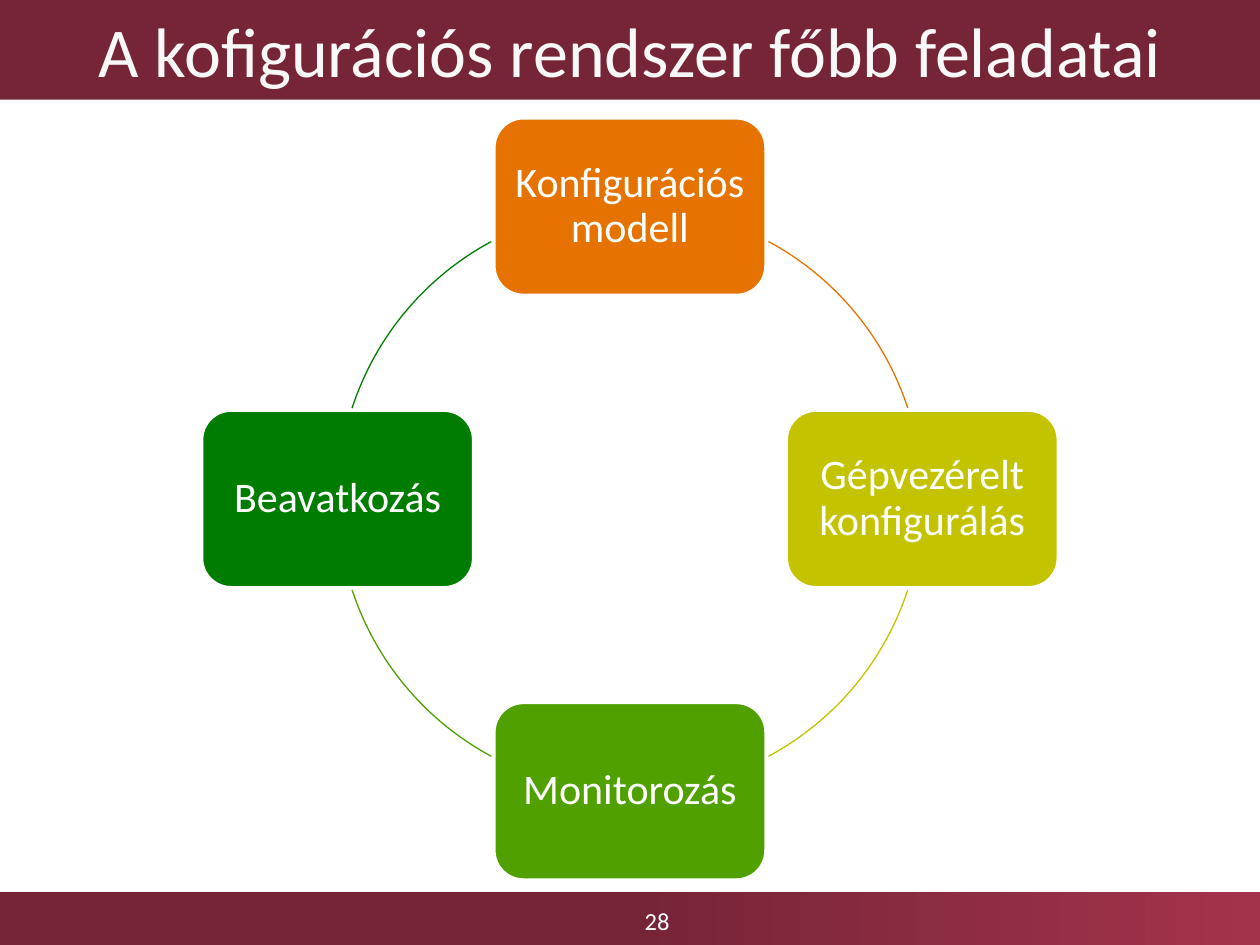
import math
from pptx import Presentation, util as u
from pptx.dml.color import RGBColor
from pptx.enum import shapes, text

# Content: steps clockwise from the top
TITLE = "A kofigurációs rendszer főbb feladatai"
PAGE = "28"
STEPS = [
    ("Konfigurációs modell", "E67300"),
    ("Gépvezérelt konfigurálás", "C3C300"),
    ("Monitorozás", "50A000"),
    ("Beavatkozás", "007D00"),
]
WINE, ROSE, WHITE, PALE = "762536", "A3334B", "FFFFFF", "F8F8F8"

# Geometry in inches
W, H = 10, 7.5
TITLE_H, FOOT_H = 0.79, 0.42
CX, CY, RADIUS = W / 2, 3.96, 2.32
BOX_W, BOX_H = 2.16, 1.41
# Degrees an arc keeps from the centre of a top/bottom box and of a side box
GAPS = (28.3, 18.1)


def rgb(value):
    return RGBColor.from_string(value)


def box(left, top, width, height):
    return [u.Inches(v) for v in (left, top, width, height)]


def write(sp, words, size, color):
    tf = sp.text_frame
    tf.word_wrap = True
    tf.vertical_anchor = text.MSO_ANCHOR.MIDDLE
    p = tf.paragraphs[0]
    p.text = words
    p.alignment = text.PP_ALIGN.CENTER
    p.font.name, p.font.size = "Calibri", u.Pt(size)
    p.font.color.rgb = rgb(color)
    return tf


def add_shape(s, kind, *place):
    sp = s.shapes.add_shape(kind, *box(*place))
    sp.shadow.inherit = False
    return sp


def add_footer(s):
    sp = add_shape(s, shapes.MSO_SHAPE.RECTANGLE, 0, H - FOOT_H, W, FOOT_H)
    sp.line.fill.background()
    sp.fill.gradient()
    sp.fill.gradient_angle = 0
    for stop, (pos, color) in zip(sp.fill.gradient_stops, [(0.5, WINE), (1, ROSE)]):
        stop.position = pos
        stop.color.rgb = rgb(color)
    write(s.shapes.add_textbox(*box(3.59, 7.11, 3.25, 0.39)), PAGE, 14, WHITE)


def add_title(s):
    sp = s.shapes.title
    sp.left, sp.top, sp.width, sp.height = box(0, 0, W, TITLE_H)
    sp.fill.solid()
    sp.fill.fore_color.rgb = rgb(WINE)
    write(sp, TITLE, 40, PALE)


def add_step(s, index, words, color):
    step = 360 / len(STEPS)
    turn = index * step - 90
    # Box centred on the ring
    angle = math.radians(turn)
    x, y = CX + RADIUS * math.cos(angle), CY + RADIUS * math.sin(angle)
    sp = add_shape(s, shapes.MSO_SHAPE.ROUNDED_RECTANGLE,
                   x - BOX_W / 2, y - BOX_H / 2, BOX_W, BOX_H)
    sp.fill.solid()
    sp.fill.fore_color.rgb = rgb(color)
    sp.line.color.rgb = rgb(WHITE)
    sp.line.width = u.Pt(2)
    tf = write(sp, words, 24, WHITE)
    tf.margin_left = tf.margin_right = u.Inches(0.1)
    tf.paragraphs[0].line_spacing = 0.9

    # Arc to the next box; an adjustment of 0.6 is one degree
    arc = add_shape(s, shapes.MSO_SHAPE.ARC,
                    CX - RADIUS, CY - RADIUS, 2 * RADIUS, 2 * RADIUS)
    start = turn + GAPS[index % 2]
    end = turn + step - GAPS[(index + 1) % 2]
    for i, degrees in enumerate((start, end)):
        arc.adjustments[i] = degrees % 360 * 0.6
    arc.fill.background()
    arc.line.color.rgb = rgb(color)
    arc.line.width = u.Pt(0.75)


def main():
    prs = Presentation()
    prs.slide_width, prs.slide_height = u.Inches(W), u.Inches(H)
    s = prs.slides.add_slide(prs.slide_layouts[5])
    add_footer(s)
    add_title(s)
    for index, (words, color) in enumerate(STEPS):
        add_step(s, index, words, color)
    prs.save("out.pptx")


if __name__ == "__main__":
    main()
